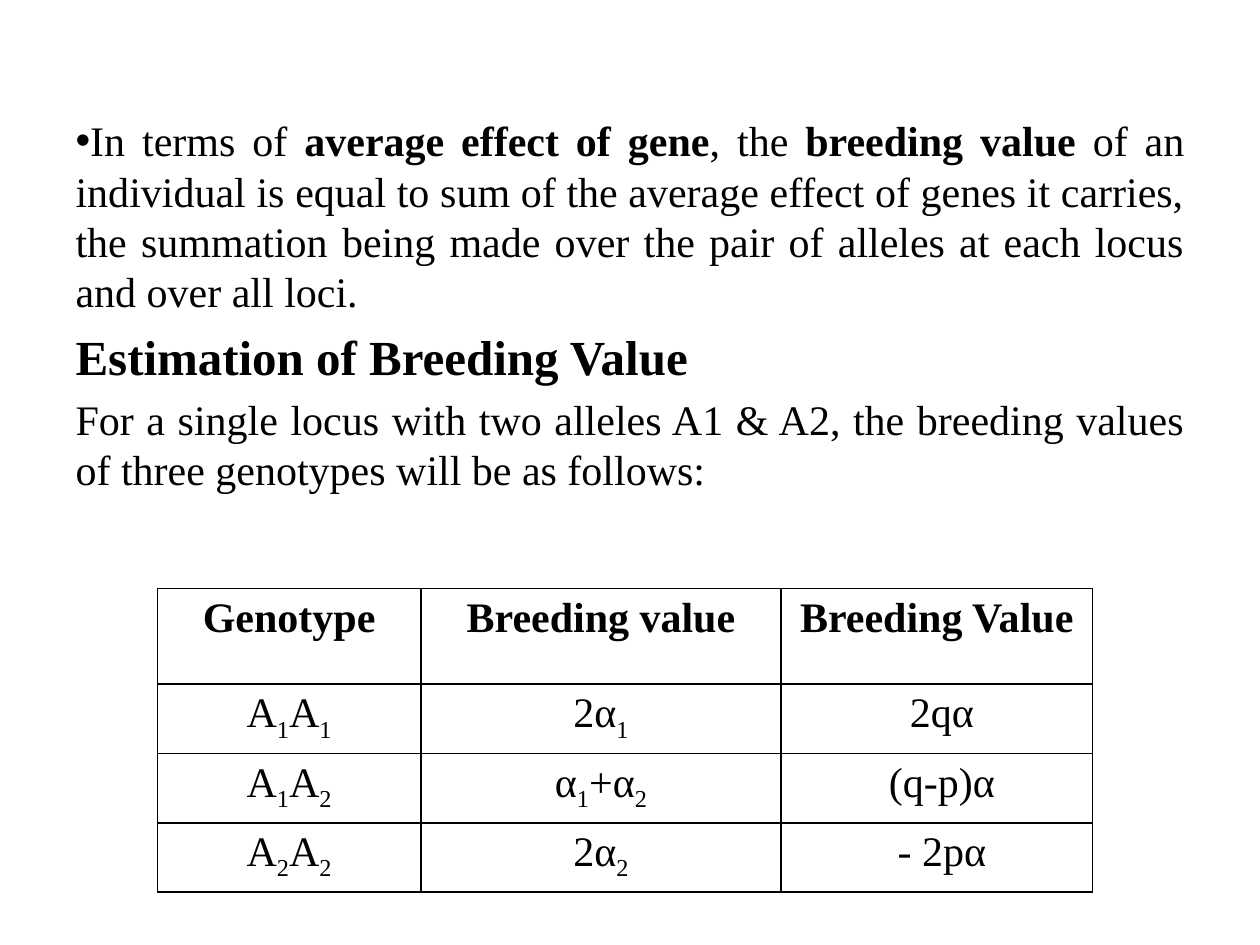
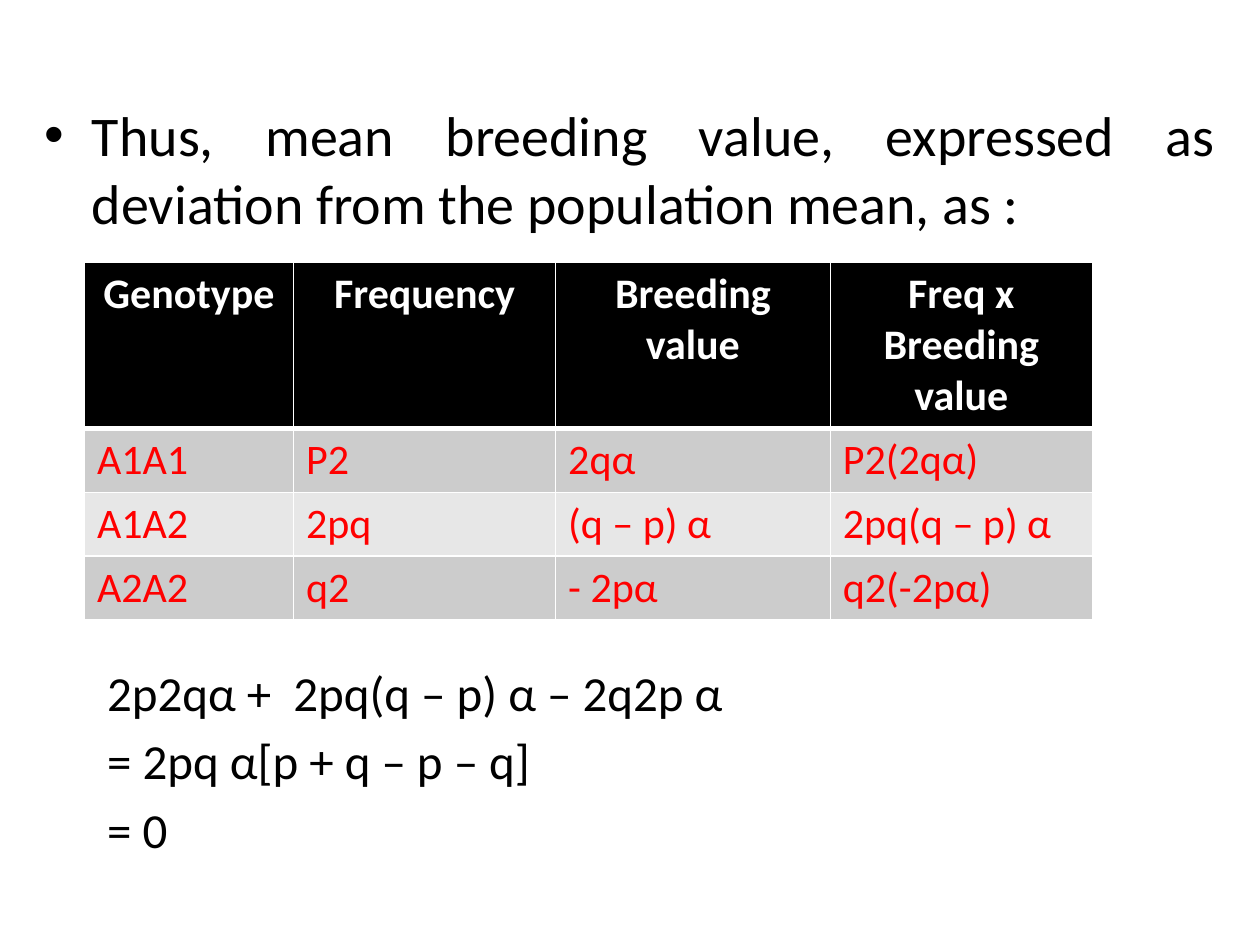
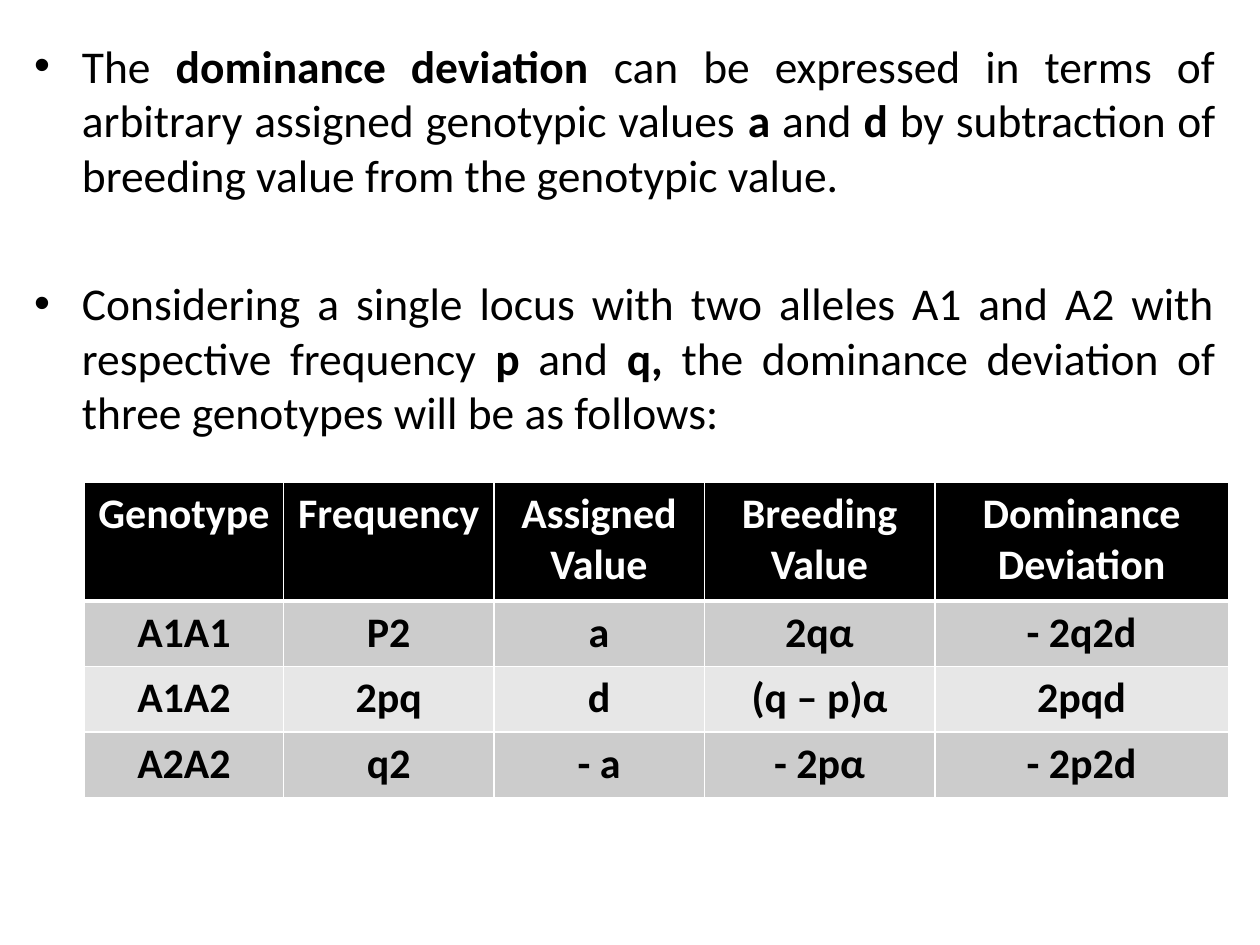
"""Build three slides on breeding value and dominance deviation."""
from dataclasses import dataclass

from lxml.etree import SubElement
from pptx import Presentation
from pptx.dml.color import RGBColor
from pptx.enum.text import MSO_AUTO_SIZE, PP_ALIGN
from pptx.oxml.ns import qn
from pptx.util import Inches, Pt


@dataclass(frozen=True)
class Theme:
    serif: str = "Times New Roman"
    sans: str = "Calibri"
    black: str = "000000"
    white: str = "FFFFFF"
    red: str = "FF0000"
    bands: tuple = ("CCCCCC", "E7E7E7")
    cell: int = 24
    text: int = 24
    head: int = 28
    lead: int = 32
    point: int = 26
    thin: int = 1
    thick: int = 3


theme = Theme()


def write(para, text, face, size, color, bold=False, align=PP_ALIGN.CENTER):
    """Fill a paragraph; * toggles bold and ~ toggles subscript."""
    para.alignment = align
    font = para.font
    font.name, font.size, font.bold = face, Pt(size), bold
    font.color.rgb = RGBColor.from_string(color)
    for i, chunk in enumerate(text.split("*")):
        for j, part in enumerate(chunk.split("~")):
            if part:
                run = para.add_run()
                run.text = part
                if i % 2:
                    run.font.bold = True
                if j % 2:
                    run._r.get_or_add_rPr().set("baseline", "-25000")


def edge(cell, side, color, width):
    """Draw one border of a cell."""
    line = SubElement(cell._tc.get_or_add_tcPr(), qn(f"a:ln{side}"), w=str(Pt(width)))
    fill = SubElement(line, qn("a:solidFill"))
    SubElement(fill, qn("a:srgbClr"), val=color)


pages = [
    dict(
        face=theme.serif,
        body=(0.5, 0.86, 9, 6.39),
        paras=[
            ("In terms of *average effect of gene*, the *breeding value* of an individual is equal "
             "to sum of the average effect of genes it carries, the summation being made over the "
             "pair of alleles at each locus and over all loci.", theme.text, True, 0, 0, None),
            ("*Estimation of Breeding Value*", theme.head, False, 0, 0, None),
            ("For a single locus with two alleles A1 & A2, the breeding values of three genotypes "
             "will be as follows:", theme.text, False, 0, 0, None),
        ],
        place=(1.25, 4.67),
        cols=(2.09, 2.86, 2.47),
        rows=(0.76, 0.55, 0.55, 0.55),
        filled=False,
        ink=theme.black,
        bold=False,
        align=PP_ALIGN.CENTER,
        cells=[
            ("Genotype", "Breeding value", "Breeding Value"),
            ("A~1~A~1~", "2α~1~", " 2qα"),
            ("A~1~A~2~", "α~1~+α~2~", " (q-p)α"),
            ("A~2~A~2~", "2α~2~", " - 2pα"),
        ],
    ),
    dict(
        face=theme.sans,
        body=(0.25, 0.75, 9.5, 6.33),
        paras=[
            ("Thus, mean breeding value, expressed as deviation from the population mean, as :",
             theme.lead, True, 0.38, -0.38, None),
            ("2p2qα +  2pq(q – p) α – 2q2p α", theme.head, False, 0.81, -0.31, 244),
            ("= 2pq α[p + q – p – q]", theme.head, False, 0.81, -0.31, None),
            ("= 0", theme.head, False, 0.81, -0.31, None),
        ],
        place=(0.67, 2.08),
        cols=(1.66, 2.08, 2.18, 2.08),
        rows=(1.32, 0.5, 0.5, 0.5),
        filled=True,
        ink=theme.red,
        bold=False,
        align=PP_ALIGN.LEFT,
        cells=[
            ("Genotype", "Frequency", "Breeding value", "Freq x Breeding value"),
            ("A1A1", "P2", "2qα", "P2(2qα)"),
            ("A1A2", "2pq", "(q – p) α", "2pq(q – p) α"),
            ("A2A2", "q2", "- 2pα", "q2(-2pα)"),
        ],
    ),
    dict(
        face=theme.sans,
        body=(0.17, 0.25, 9.58, 6.58),
        paras=[
            ("The *dominance deviation* can be expressed in terms of arbitrary assigned genotypic "
             "values *a* and *d* by subtraction of breeding value from the genotypic value.",
             theme.point, True, 0.38, -0.38, None),
            ("Considering a single locus with two alleles A1 and A2 with respective frequency *p* "
             "and *q,* the dominance deviation of three genotypes will be as follows:",
             theme.point, True, 0.38, -0.38, 42),
        ],
        place=(0.67, 3.83),
        cols=(1.58, 1.67, 1.67, 1.83, 2.33),
        rows=(0.94, 0.52, 0.52, 0.52),
        filled=True,
        ink=theme.black,
        bold=True,
        align=PP_ALIGN.CENTER,
        cells=[
            ("Genotype", "Frequency", "Assigned Value", "Breeding Value", "Dominance Deviation"),
            ("A1A1", "P2", "a", "2qα", "- 2q2d"),
            ("A1A2", "2pq", "d", "(q – p)α", "2pqd"),
            ("A2A2", "q2", "- a", "- 2pα", "- 2p2d"),
        ],
    ),
]

deck = Presentation()
deck.slide_width, deck.slide_height = Inches(10), Inches(7.5)

for page in pages:
    slide = deck.slides.add_slide(deck.slide_layouts[1])
    title, body = slide.placeholders
    title.element.getparent().remove(title.element)
    body.left, body.top, body.width, body.height = map(Inches, page["body"])
    frame = body.text_frame
    frame.auto_size = MSO_AUTO_SIZE.NONE
    for n, (text, size, dot, left, hang, gap) in enumerate(page["paras"]):
        para = frame.add_paragraph() if n else frame.paragraphs[0]
        props = para._p.get_or_add_pPr()
        props.set("marL", str(Inches(left)))
        props.set("indent", str(Inches(hang)))
        if gap:
            para.space_before = Pt(gap)
        if not dot:
            SubElement(props, qn("a:buNone"))
        write(para, text, page["face"], size, theme.black, align=PP_ALIGN.JUSTIFY)

    cols, rows, filled = page["cols"], page["rows"], page["filled"]
    size = map(Inches, (*page["place"], sum(cols), sum(rows)))
    grid = slide.shapes.add_table(len(rows), len(cols), *size).table
    grid.first_row = grid.horz_banding = False
    for col, width in zip(grid.columns, cols):
        col.width = Inches(width)
    for r, (row, height) in enumerate(zip(grid.rows, rows)):
        row.height = Inches(height)
        head = r == 0
        for cell, text in zip(row.cells, page["cells"][r]):
            for side in "LRTB":
                rule = filled and (r, side) in ((0, "B"), (1, "T"))
                edge(cell, side, theme.white if filled else theme.black,
                     theme.thick if rule else theme.thin)
            if filled:
                cell.fill.solid()
                shade = theme.black if head else theme.bands[(r - 1) % 2]
                cell.fill.fore_color.rgb = RGBColor.from_string(shade)
            else:
                cell.fill.background()
            write(cell.text_frame.paragraphs[0], text, page["face"], theme.cell,
                  theme.white if head and filled else page["ink"],
                  head or page["bold"], PP_ALIGN.CENTER if head else page["align"])

deck.save("out.pptx")
